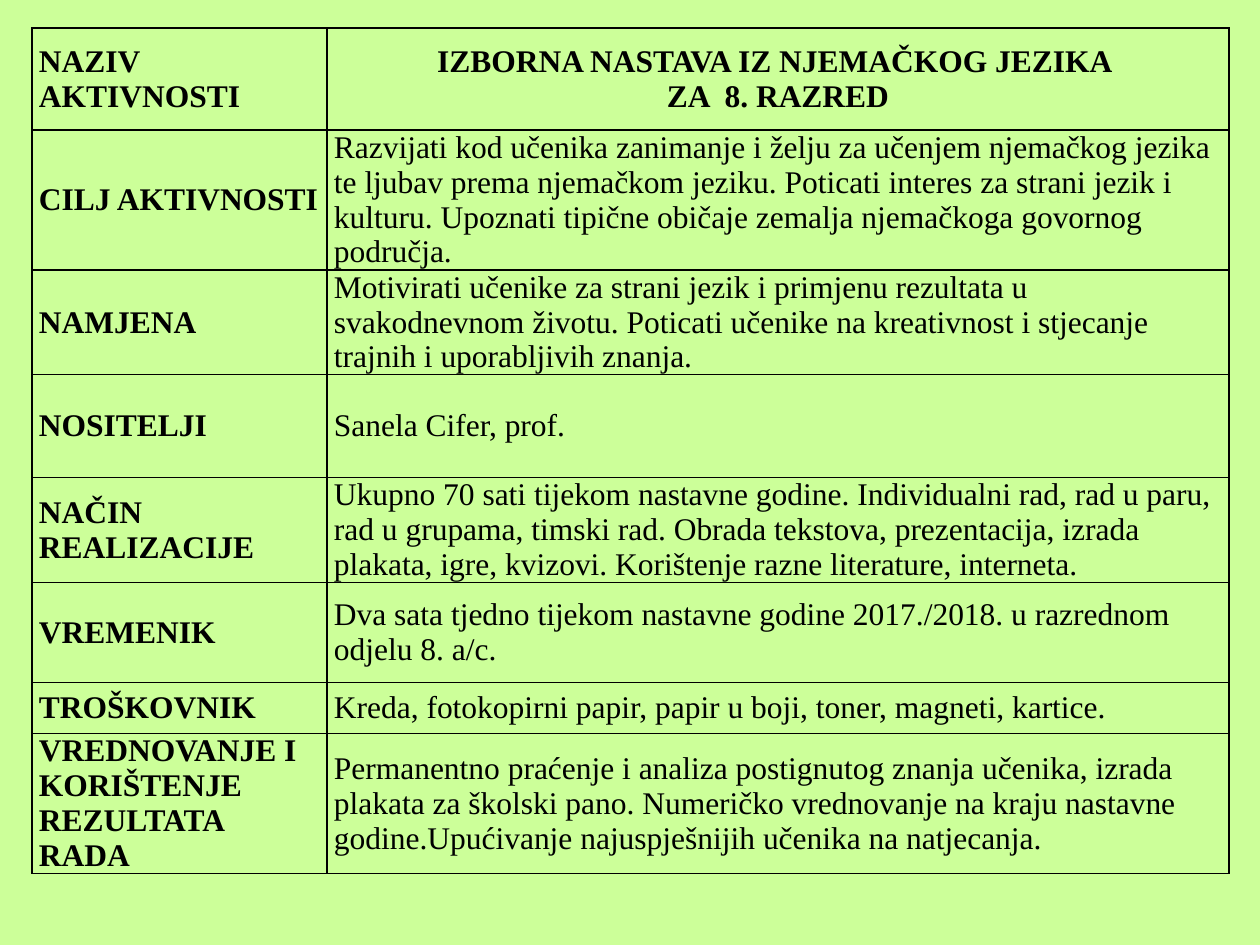
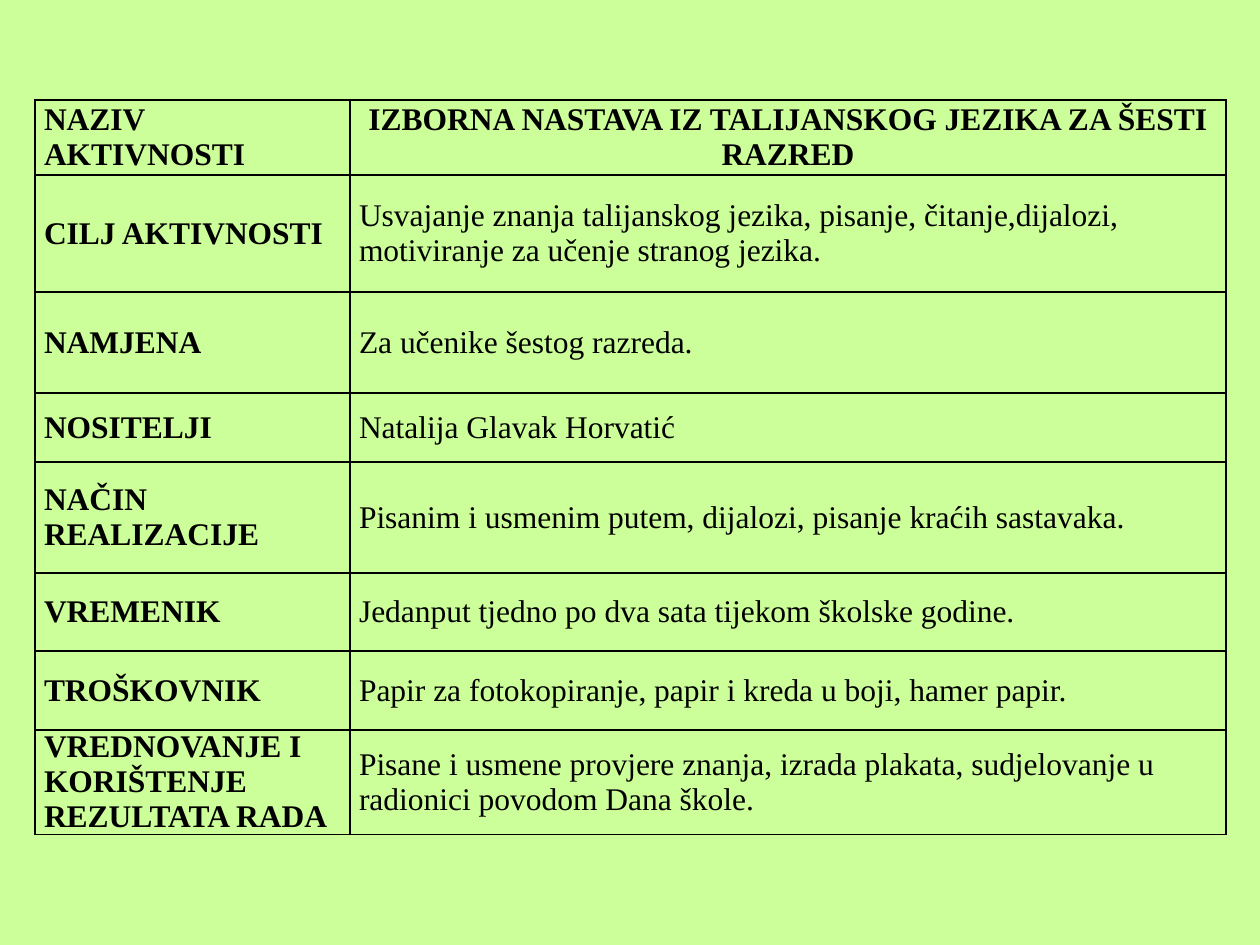
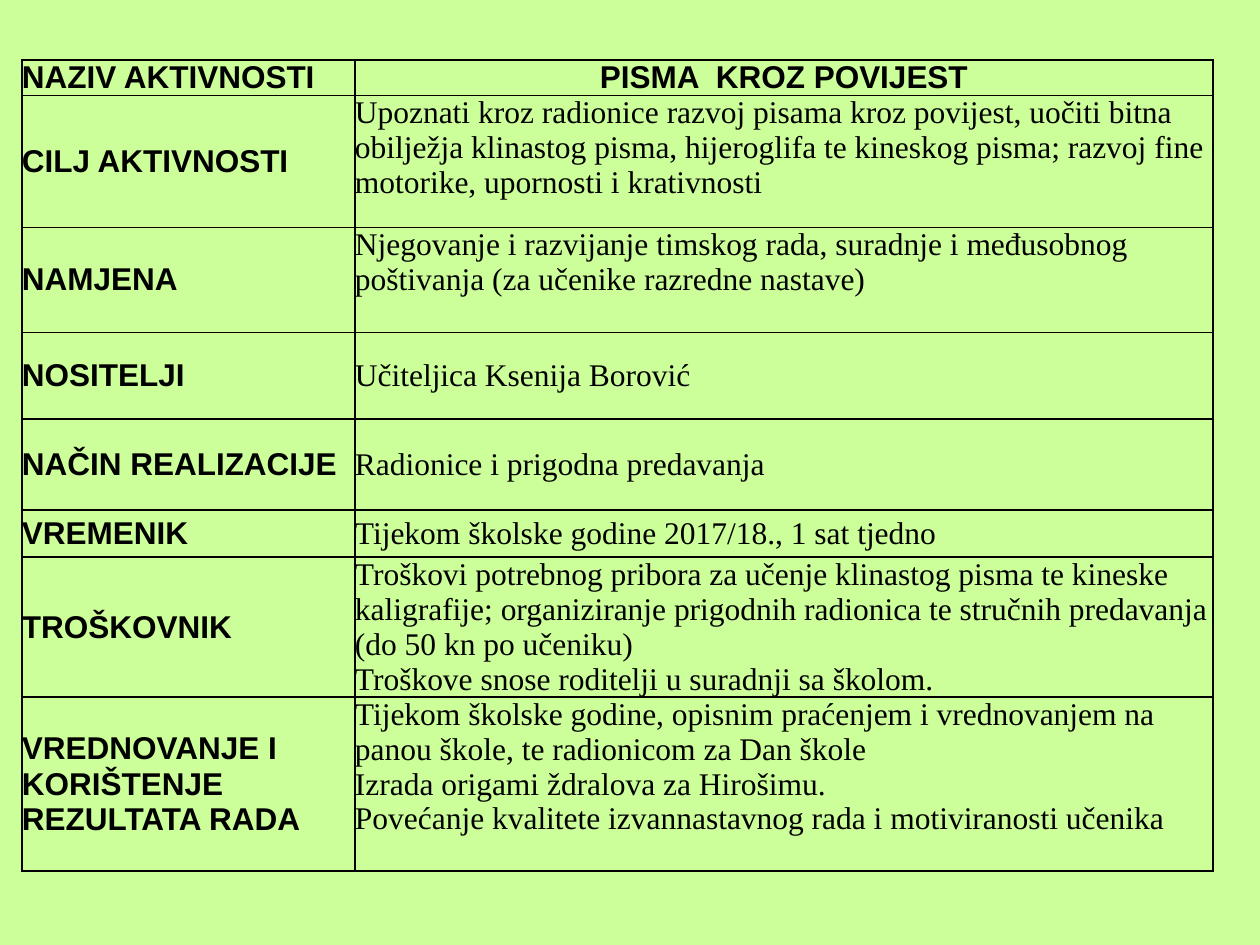
from lxml import etree
from pptx import Presentation
from pptx.dml.color import RGBColor
from pptx.enum.text import MSO_ANCHOR, PP_ALIGN
from pptx.oxml.ns import qn
from pptx.util import Emu, Pt

TOP, MIDDLE = MSO_ANCHOR.TOP, MSO_ANCHOR.MIDDLE
LEFT, CENTER = PP_ALIGN.LEFT, PP_ALIGN.CENTER
BACKGROUND = RGBColor(0xCC, 0xFF, 0x99)
BLACK = RGBColor(0, 0, 0)
SERIF, SANS = "Times New Roman", "Arial"
EMU_PER_PX = 914400 / 126
SLIDE_WIDTH, SLIDE_HEIGHT = 1260, 945
BLANK_LAYOUT = 6
BORDER_SIDES = ("lnL", "lnR", "lnT", "lnB")

LABELS = [
    "NAZIV AKTIVNOSTI",
    "CILJ AKTIVNOSTI",
    "NAMJENA",
    "NOSITELJI",
    "NAČIN REALIZACIJE",
    "VREMENIK",
    "TROŠKOVNIK",
    "VREDNOVANJE I KORIŠTENJE REZULTATA RADA",
]

ACTIVITIES = [
    {
        "position": (32, 28),
        "columns": (295, 902),
        "rows": (102, 140, 104, 103, 105, 100, 51, 140),
        "inset": 7,
        "heading_font": SERIF,
        "top_rows": (),
        "details": [
            ["IZBORNA NASTAVA IZ NJEMAČKOG JEZIKA ", "ZA  8. RAZRED"],
            ["Razvijati kod učenika zanimanje i želju za učenjem njemačkog jezika te ljubav "
             "prema njemačkom jeziku. Poticati interes za strani jezik i kulturu. Upoznati "
             "tipične običaje zemalja njemačkoga govornog područja."],
            ["Motivirati učenike za strani jezik i primjenu rezultata u svakodnevnom životu. "
             "Poticati učenike na kreativnost i stjecanje trajnih i uporabljivih znanja."],
            ["Sanela Cifer, prof."],
            ["Ukupno 70 sati tijekom nastavne godine. Individualni rad, rad u paru, rad u "
             "grupama, timski rad. Obrada tekstova, prezentacija, izrada plakata, igre, "
             "kvizovi. Korištenje razne literature, interneta."],
            ["Dva sata tjedno tijekom nastavne godine 2017./2018. u razrednom odjelu 8. a/c."],
            ["Kreda, fotokopirni papir, papir u boji, toner, magneti, kartice."],
            ["Permanentno praćenje i analiza postignutog znanja učenika, izrada plakata za "
             "školski pano. Numeričko vrednovanje na kraju nastavne godine.Upućivanje "
             "najuspješnijih učenika na natjecanja."],
        ],
    },
    {
        "position": (35, 100),
        "columns": (315, 876),
        "rows": (75, 117, 101, 69, 111, 78, 79, 104),
        "inset": 9,
        "heading_font": SERIF,
        "top_rows": (),
        "details": [
            ["IZBORNA NASTAVA IZ TALIJANSKOG JEZIKA ZA ŠESTI RAZRED"],
            ["Usvajanje znanja talijanskog jezika, pisanje, čitanje,dijalozi, motiviranje za "
             "učenje stranog jezika."],
            ["Za učenike šestog razreda."],
            ["Natalija Glavak Horvatić"],
            ["Pisanim i usmenim putem, dijalozi, pisanje kraćih sastavaka."],
            ["Jedanput tjedno po dva sata tijekom školske godine."],
            ["Papir za fotokopiranje, papir i kreda u boji, hamer papir."],
            ["Pisane i usmene provjere znanja, izrada plakata, sudjelovanje u radionici "
             "povodom Dana škole."],
        ],
    },
    {
        "position": (22, 60),
        "columns": (333, 858),
        "rows": (35, 132, 105, 87, 91, 47, 140, 174),
        "inset": 0,
        "heading_font": SANS,
        "top_rows": (1, 2, 7),
        "details": [
            ["PISMA  KROZ POVIJEST"],
            ["Upoznati kroz radionice razvoj pisama kroz povijest, uočiti bitna obilježja "
             "klinastog pisma, hijeroglifa te kineskog pisma; razvoj fine motorike, "
             "upornosti i krativnosti"],
            ["Njegovanje i razvijanje timskog rada, suradnje i međusobnog poštivanja (za "
             "učenike razredne nastave)"],
            ["Učiteljica Ksenija Borović"],
            ["Radionice i prigodna predavanja"],
            ["Tijekom školske godine 2017/18., 1 sat tjedno"],
            ["Troškovi potrebnog pribora za učenje klinastog pisma te kineske kaligrafije; "
             "organiziranje prigodnih radionica te stručnih predavanja",
             "(do 50 kn po učeniku)",
             "Troškove snose roditelji u suradnji sa školom."],
            ["Tijekom školske godine, opisnim praćenjem i vrednovanjem na panou škole, te "
             "radionicom za Dan škole",
             "Izrada origami ždralova za Hirošimu.",
             "Povećanje kvalitete izvannastavnog rada i motiviranosti učenika"],
        ],
    },
]


def px(length):
    return Emu(round(length * EMU_PER_PX))


def set_attributes(target, values):
    for name, value in values.items():
        setattr(target, name, value)


def add_borders(cell):
    properties = cell._tc.get_or_add_tcPr()
    for side in BORDER_SIDES:
        line = etree.SubElement(properties, qn(f"a:{side}"), w=str(Pt(1)))
        fill = etree.SubElement(line, qn("a:solidFill"))
        etree.SubElement(fill, qn("a:srgbClr"), val=str(BLACK))


def fill_cell(cell, lines, inset, anchor, alignment, font_name, bold):
    add_borders(cell)
    cell.fill.background()
    set_attributes(cell, {
        "margin_left": px(inset), "margin_right": px(inset),
        "margin_top": 0, "margin_bottom": 0, "vertical_anchor": anchor,
    })
    cell.text = "\n".join(lines)
    for paragraph in cell.text_frame.paragraphs:
        paragraph.alignment = alignment
        for run in paragraph.runs:
            set_attributes(run.font, {"name": font_name, "size": Pt(18), "bold": bold})
            run.font.color.rgb = BLACK


def add_activity(presentation, activity):
    slide = presentation.slides.add_slide(presentation.slide_layouts[BLANK_LAYOUT])
    columns, rows = activity["columns"], activity["rows"]
    frame = (*activity["position"], sum(columns), sum(rows))
    table = slide.shapes.add_table(len(rows), len(columns), *map(px, frame)).table
    set_attributes(table, {"first_row": False, "horz_banding": False})
    for column, width in zip(table.columns, columns):
        column.width = px(width)
    for row, height in zip(table.rows, rows):
        row.height = px(height)

    inset, heading_font = activity["inset"], activity["heading_font"]
    for index, (label, detail) in enumerate(zip(LABELS, activity["details"])):
        is_heading = index == 0
        fill_cell(table.cell(index, 0), [label], inset, MIDDLE, LEFT, heading_font, True)
        fill_cell(table.cell(index, 1), detail, inset,
                  TOP if index in activity["top_rows"] else MIDDLE,
                  CENTER if is_heading else LEFT,
                  heading_font if is_heading else SERIF, is_heading)


def main():
    presentation = Presentation()
    set_attributes(presentation, {
        "slide_width": px(SLIDE_WIDTH), "slide_height": px(SLIDE_HEIGHT),
    })
    background = presentation.slide_master.background.fill
    background.solid()
    background.fore_color.rgb = BACKGROUND
    for activity in ACTIVITIES:
        add_activity(presentation, activity)
    presentation.save("out.pptx")


if __name__ == "__main__":
    main()
